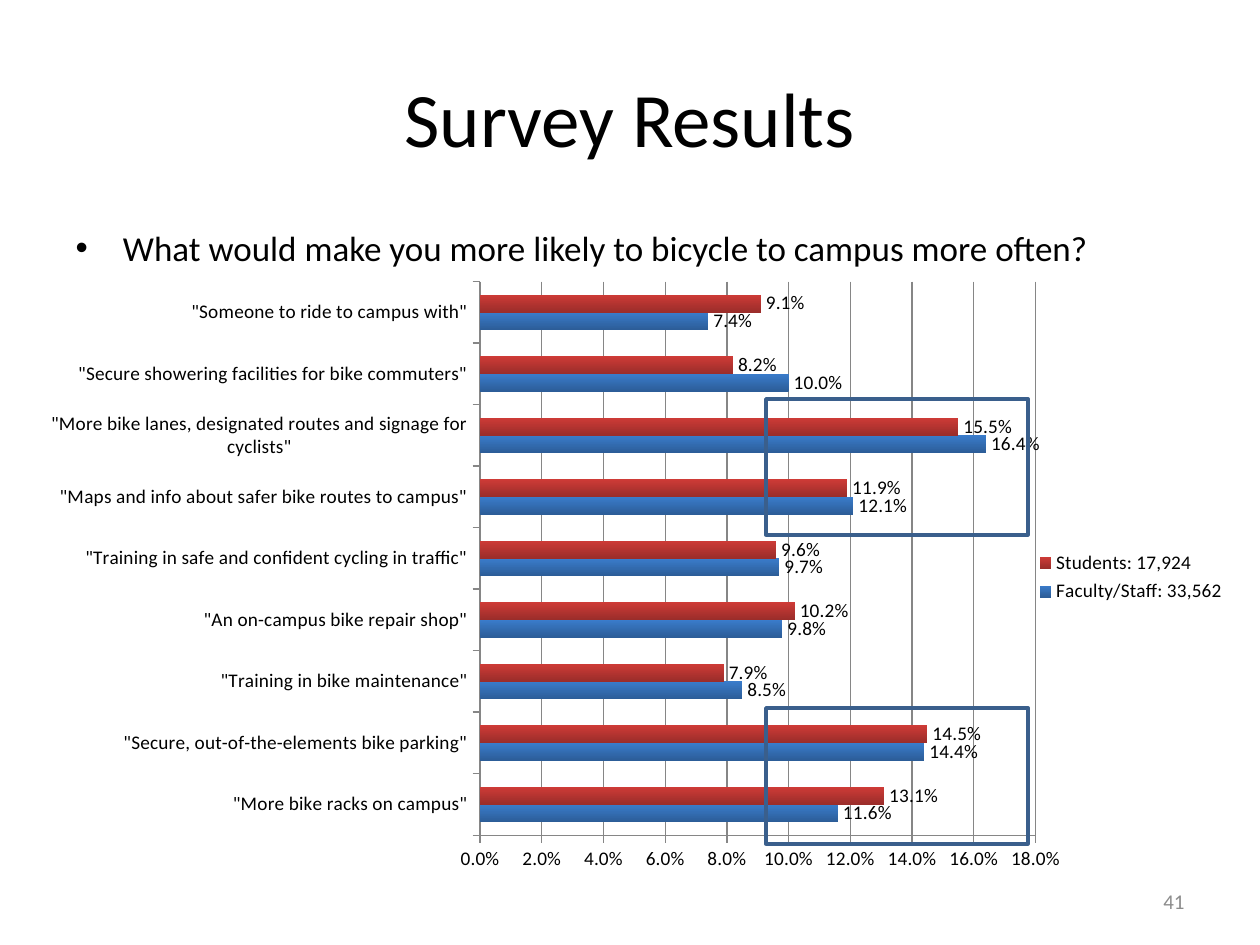
"""Build the survey results slide: a question and a clustered bar chart with two highlighted groups."""
from lxml import etree
from pptx import Presentation
from pptx import util as u
from pptx.chart.data import CategoryChartData
from pptx.dml.color import RGBColor
from pptx.enum import chart as ch, shapes, text
from pptx.oxml.ns import qn

PX = 914400 / 126
FONT = "Calibri"
COLORS = {
    "text": "000000", "number": "8C8C8C", "grid": "868686", "box": "3A5F8C",
    "blue_top": "3A7CCB", "blue_end": "2C5D98",
    "red_top": "CE3B37", "red_end": "9B2D2A",
}


def px(*lengths):
    return [u.Emu(round(n * PX)) for n in lengths]


def write(sp, words, size, color="text", align=None, anchor=None, box=None):
    if box:
        sp.left, sp.top, sp.width, sp.height = px(*box)
    tf = sp.text_frame
    tf.word_wrap = True
    if anchor is not None:
        tf.vertical_anchor = anchor
    p = tf.paragraphs[0]
    p.alignment = align
    r = p.add_run()
    r.text = words
    r.font.size = u.Pt(size)
    r.font.name = FONT
    r.font.color.rgb = RGBColor.from_string(COLORS[color])


prs = Presentation()
prs.slide_width, prs.slide_height = px(1260, 945)
s = prs.slides.add_slide(prs.slide_layouts[1])

write(s.shapes.title, "Survey Results", 44, align=text.PP_ALIGN.CENTER,
      anchor=text.MSO_ANCHOR.MIDDLE, box=(63, 38, 1134, 158))
write(s.placeholders[1], "What would make you more likely to bicycle to campus more often?", 20,
      box=(63, 220, 1134, 624))

rows = [
    ("More bike racks on campus", 0.116, 0.131),
    ("Secure, out-of-the-elements bike parking", 0.144, 0.145),
    ("Training in bike maintenance", 0.085, 0.079),
    ("An on-campus bike repair shop", 0.098, 0.102),
    ("Training in safe and confident cycling in traffic", 0.097, 0.096),
    ("Maps and info about safer bike routes to campus", 0.121, 0.119),
    ("More bike lanes, designated routes and signage for cyclists", 0.164, 0.155),
    ("Secure showering facilities for bike commuters", 0.1, 0.082),
    ("Someone to ride to campus with", 0.074, 0.091),
]
answers, staff, students = zip(*rows)
data = CategoryChartData(number_format="0.0%")
data.categories = [f'"{answer}"' for answer in answers]
data.add_series("Faculty/Staff: 33,562", staff)
data.add_series("Students: 17,924", students)

chart = s.shapes.add_chart(ch.XL_CHART_TYPE.BAR_CLUSTERED, *px(21, 262, 1218, 630), data).chart
chart.has_title = False
chart.font.size = u.Pt(11)
chart.font.name = FONT
chart.font.color.rgb = RGBColor.from_string(COLORS["text"])
chart.has_legend = True
chart.legend.position = ch.XL_LEGEND_POSITION.RIGHT
chart.legend.include_in_layout = False

plot = chart.plots[0]
plot.gap_width = 150
plot.overlap = 0
plot.vary_by_categories = False
for series, hue in zip(plot.series, ("blue", "red")):
    fill = series.format.fill
    fill.gradient()
    fill.gradient_angle = 270
    for stop, end in zip(fill.gradient_stops, ("top", "end")):
        stop.color.rgb = RGBColor.from_string(COLORS[f"{hue}_{end}"])
    labels = series.data_labels
    labels.show_value = True
    labels.number_format = "0.0%"
    labels.number_format_is_linked = False
    labels.position = ch.XL_LABEL_POSITION.OUTSIDE_END

values = chart.value_axis
values.minimum_scale, values.maximum_scale, values.major_unit = 0, 0.18, 0.02
values.tick_labels.number_format = "0.0%"
values.tick_labels.number_format_is_linked = False
values.has_major_gridlines = True
for axis in (values, chart.category_axis):
    axis.major_tick_mark = ch.XL_TICK_MARK.OUTSIDE
for part in (values, chart.category_axis, values.major_gridlines):
    part.format.line.color.rgb = RGBColor.from_string(COLORS["grid"])
    part.format.line.width = u.Pt(0.75)

area = chart.element.find(".//" + qn("c:plotArea"))
layout = area.find(qn("c:layout"))
if layout is None:
    layout = etree.Element(qn("c:layout"))
    area.insert(0, layout)
manual = etree.SubElement(layout, qn("c:manualLayout"))
for tag, val in (("layoutTarget", "inner"), ("xMode", "edge"), ("yMode", "edge"),
                 ("x", "0.377"), ("y", "0.031"), ("w", "0.456"), ("h", "0.879")):
    etree.SubElement(manual, qn(f"c:{tag}")).set("val", val)

number = s.shapes.add_textbox(*px(903, 876, 294, 50))
write(number, "41", 12, "number", text.PP_ALIGN.RIGHT, text.MSO_ANCHOR.MIDDLE)

for top in (399, 708):
    sp = s.shapes.add_shape(shapes.MSO_SHAPE.RECTANGLE, *px(766, top, 262, 136))
    sp.shadow.inherit = False
    sp.fill.background()
    sp.line.color.rgb = RGBColor.from_string(COLORS["box"])
    sp.line.width = u.Pt(2)

prs.save("out.pptx")
